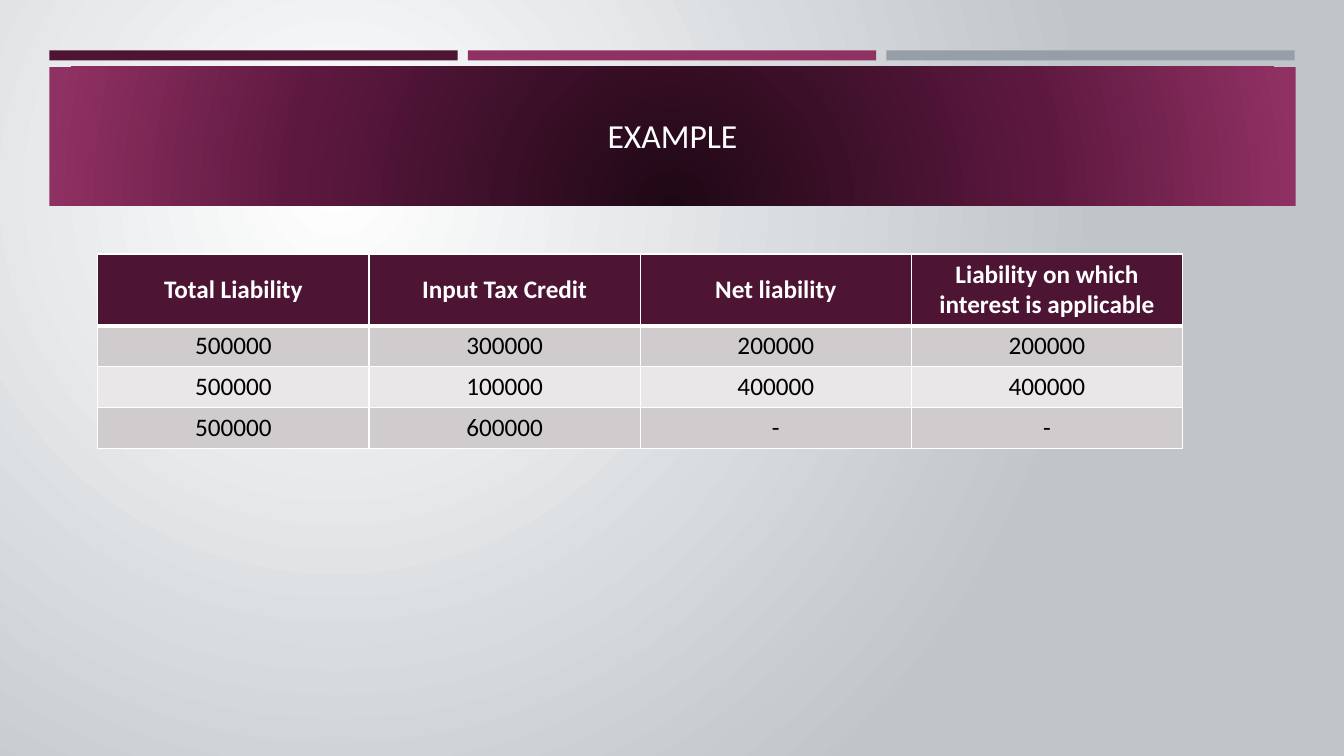
from lxml import etree
from pptx import Presentation
from pptx.dml.color import RGBColor
from pptx.enum.shapes import MSO_SHAPE
from pptx.enum.text import MSO_ANCHOR, PP_ALIGN
from pptx.oxml.ns import nsdecls, qn
from pptx.util import Inches, Pt

RECT = MSO_SHAPE.RECTANGLE
CENTER = PP_ALIGN.CENTER
TOP, MIDDLE = MSO_ANCHOR.TOP, MSO_ANCHOR.MIDDLE
TITLE_ONLY = 5

COLORS = {
    "white": "FFFFFF", "black": "000000", "mist": "C0C5CA",
    "plum": "4D1434", "berry": "903163", "slate": "969FA7",
    "wine": "5D183F", "night": "1F0815",
    "band_dark": "D0CCCE", "band_light": "E9E7E8",
}
FONT = "Calibri"
WIDTH, HEIGHT = 13.33, 7.5
MARGIN, BAR_TOP, BAR_W, BAR_H, BAR_STEP = 0.49, 0.5, 4.05, 0.1, 4.15
BANNER = (MARGIN, 0.66, 12.36, 1.38)
TITLE = (0.64, 0.8, 12.06, 1.08)
TABLE_LEFT, TABLE_TOP, COL_W, HEADER_H, ROW_H = 0.97, 2.52, 2.69, 0.7, 0.405

ROWS = [
    ["Total Liability", "Input Tax Credit", "Net liability",
     "Liability on which interest is applicable"],
    ["500000", "300000", "200000", "200000"],
    ["500000", "100000", "400000", "400000"],
    ["500000", "600000", "-", "-"],
]


def rgb(name):
    return RGBColor.from_string(COLORS[name])


def radial_gradient(owner, fill, stops, focus):
    """Fill owner with a circular gradient; focus is left, top, right, bottom in percent."""
    fill.gradient()
    old = owner.element.find(".//" + qn("a:gradFill"))
    gs = "".join(f'<a:gs pos="{pos * 1000}"><a:srgbClr val="{COLORS[name]}"/></a:gs>'
                 for pos, name in stops)
    sides = " ".join(f'{side}="{share * 1000}"' for side, share in zip("ltrb", focus))
    new = etree.fromstring(
        f'<a:gradFill {nsdecls("a")} rotWithShape="1"><a:gsLst>{gs}</a:gsLst>'
        f'<a:path path="circle"><a:fillToRect {sides}/></a:path></a:gradFill>')
    old.getparent().replace(old, new)


def add_rect(s, left, top, width, height, color=None):
    sp = s.shapes.add_shape(RECT, *map(Inches, (left, top, width, height)))
    sp.shadow.inherit = False
    sp.line.fill.background()
    if color:
        sp.fill.solid()
        sp.fill.fore_color.rgb = rgb(color)
    return sp


def write(tf, text, size=18, color="black", bold=False):
    p = tf.paragraphs[0]
    p.alignment = CENTER
    r = p.add_run()
    r.text = text
    r.font.name, r.font.size, r.font.bold = FONT, Pt(size), bold
    r.font.color.rgb = rgb(color)


def set_borders(cell, **widths):
    """Draw white cell borders; widths in points are keyed by L, R, T, B."""
    tc_pr = cell._tc.get_or_add_tcPr()
    for i, (side, width) in enumerate(widths.items()):
        tc_pr.insert(i, etree.fromstring(
            f'<a:ln{side} {nsdecls("a")} w="{Pt(width)}"><a:solidFill>'
            f'<a:srgbClr val="{COLORS["white"]}"/></a:solidFill></a:ln{side}>'))


def add_liability_table(s):
    n_rows, n_cols = len(ROWS), len(ROWS[0])
    height = HEADER_H + ROW_H * (n_rows - 1)
    table = s.shapes.add_table(n_rows, n_cols, Inches(TABLE_LEFT), Inches(TABLE_TOP),
                               Inches(COL_W * n_cols), Inches(height)).table
    for i, texts in enumerate(ROWS):
        header = i == 0
        table.rows[i].height = Inches(HEADER_H if header else ROW_H)
        band = "plum" if header else "band_dark" if i % 2 else "band_light"
        for j, text in enumerate(texts):
            cell = table.cell(i, j)
            cell.fill.solid()
            cell.fill.fore_color.rgb = rgb(band)
            cell.vertical_anchor = MIDDLE if header else TOP
            write(cell.text_frame, text, color="white" if header else "black", bold=header)
            set_borders(cell, L=1, R=1, T=3 if i == 1 else 1, B=3 if header else 1)


def place_title(s, text):
    title = s.shapes.title
    title.left, title.top, title.width, title.height = map(Inches, TITLE)
    title.text_frame.vertical_anchor = MIDDLE
    title.text_frame.word_wrap = True
    write(title.text_frame, text, size=24, color="white")
    title.element.getparent().append(title.element)


def main():
    prs = Presentation()
    prs.slide_width, prs.slide_height = Inches(WIDTH), Inches(HEIGHT)
    s = prs.slides.add_slide(prs.slide_layouts[TITLE_ONLY])
    radial_gradient(s, s.background.fill, [(0, "white"), (100, "mist")], (50, 50, 100, 100))
    for i, color in enumerate(("plum", "berry", "slate")):
        add_rect(s, MARGIN + i * BAR_STEP, BAR_TOP, BAR_W, BAR_H, color)
    banner = add_rect(s, *BANNER)
    radial_gradient(banner, banner.fill, [(0, "night"), (60, "wine"), (100, "berry")],
                    (50, 130, 50, -30))
    place_title(s, "EXAMPLE")
    add_liability_table(s)
    prs.save("out.pptx")


if __name__ == "__main__":
    main()
